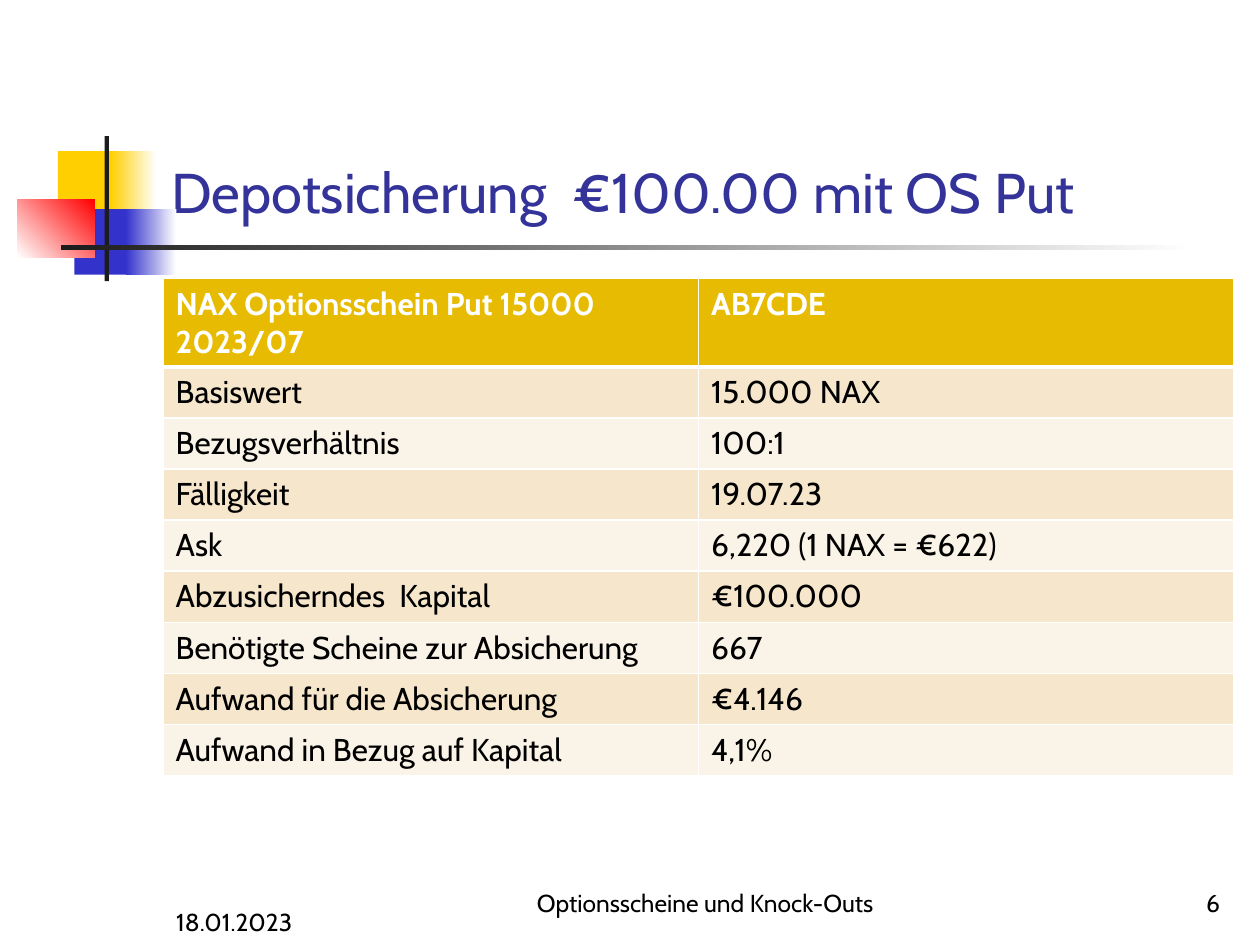
import pptx
import pptx.dml.color
import pptx.enum.shapes
import pptx.enum.text
import pptx.oxml
import pptx.oxml.ns
import pptx.util

Pt = pptx.util.Pt
RGBColor = pptx.dml.color.RGBColor
ALIGN = pptx.enum.text.PP_ALIGN
BOTTOM = pptx.enum.text.MSO_ANCHOR.BOTTOM

FONT = "Cabin"
WHITE = RGBColor(0xFF, 0xFF, 0xFF)
BLACK = RGBColor(0, 0, 0)
YELLOW = RGBColor(0xFF, 0xCF, 0x01)
BLUE = RGBColor(0x33, 0x33, 0xCC)
RED = RGBColor(0xFF, 0, 0)
CHARCOAL = RGBColor(0x1C, 0x1C, 0x1C)
TITLE_BLUE = RGBColor(0x33, 0x33, 0x99)
HEADER_GOLD = RGBColor(0xE7, 0xBB, 0x01)
BAND_COLORS = (RGBColor(0xF6, 0xE7, 0xCC), RGBColor(0xFA, 0xF3, 0xE7))

TITLE = "Depotsicherung  €100.00 mit OS Put"
TITLE_BOX = (90.7, 16.6, 613.4, 115.2)

# left, top, width, height, colors (two make a gradient), gradient angle
ORNAMENTS = [
    (33.1, 86.4, 34.6, 37.4, (YELLOW,), 0),
    (63.4, 86.4, 25.9, 37.4, (YELLOW, WHITE), 0),
    (42.5, 119.5, 33.1, 37.4, (BLUE,), 0),
    (72, 119.5, 28.8, 37.4, (BLUE, WHITE), 0),
    (10, 113.8, 44, 33.1, (WHITE, RED), 45),
    (59.8, 77.8, 2.4, 82.8, (CHARCOAL,), 0),
    (34.8, 140.2, 648, 2.4, (CHARCOAL, WHITE), 0),
]

# text, left, top, width, alignment
FOOTERS = [
    ("18.01.2023", 93.6, 502.6, 149.8, ALIGN.LEFT),
    ("Optionsscheine und Knock-Outs", 289, 491.8, 228.2, ALIGN.CENTER),
    ("6", 554.4, 491.8, 149.8, ALIGN.RIGHT),
]
FOOTER_HEIGHT = 36

TABLE_ROWS = [
    ("NAX Optionsschein Put 15000 2023/07", "AB7CDE"),
    ("Basiswert", "15.000 NAX"),
    ("Bezugsverhältnis", "100:1"),
    ("Fälligkeit", "19.07.23"),
    ("Ask", "6,220 (1 NAX = €622)"),
    ("Abzusicherndes  Kapital", "€100.000"),
    ("Benötigte Scheine zur Absicherung", "667"),
    ("Aufwand für die Absicherung", "€4.146"),
    ("Aufwand in Bezug auf Kapital", "4,1%"),
]
TABLE_LEFT, TABLE_TOP = 93.2, 159.2
COLUMN_WIDTH, HEADER_HEIGHT, ROW_HEIGHT = 306, 50, 29.2


def write(text_frame, text, size, color, bold=False, align=ALIGN.LEFT):
    paragraph = text_frame.paragraphs[0]
    paragraph.alignment = align
    run = paragraph.add_run()
    run.text = text
    run.font.name = FONT
    run.font.size = Pt(size)
    run.font.bold = bold
    run.font.color.rgb = color


def add_ornament(slide, left, top, width, height, colors, angle):
    shape = slide.shapes.add_shape(
        pptx.enum.shapes.MSO_SHAPE.RECTANGLE, Pt(left), Pt(top), Pt(width), Pt(height))
    shape.shadow.inherit = False
    shape.line.fill.background()
    if len(colors) == 1:
        shape.fill.solid()
        shape.fill.fore_color.rgb = colors[0]
    else:
        shape.fill.gradient()
        shape.fill.gradient_angle = angle
        for stop, color in zip(shape.fill.gradient_stops, colors):
            stop.color.rgb = color


def add_title(slide):
    title = slide.shapes.title
    title.left, title.top, title.width, title.height = map(Pt, TITLE_BOX)
    title.text_frame.vertical_anchor = BOTTOM
    title.text_frame.word_wrap = True
    write(title.text_frame, TITLE, 32, TITLE_BLUE)


def add_footer(slide, text, left, top, width, align):
    box = slide.shapes.add_textbox(Pt(left), Pt(top), Pt(width), Pt(FOOTER_HEIGHT))
    box.text_frame.word_wrap = True
    box.text_frame.vertical_anchor = BOTTOM
    write(box.text_frame, text, 14, BLACK, align=align)


def set_borders(cell, widths):
    """Draw white borders; widths maps each side (L, R, T, B) to points."""
    properties = cell._tc.get_or_add_tcPr()
    for side, width in widths.items():
        properties.append(pptx.oxml.parse_xml(
            f'<a:ln{side} {pptx.oxml.ns.nsdecls("a")} w="{Pt(width)}">'
            f'<a:solidFill><a:srgbClr val="{WHITE}"/></a:solidFill></a:ln{side}>'))


def add_table(slide):
    row_count, column_count = len(TABLE_ROWS), len(TABLE_ROWS[0])
    height = HEADER_HEIGHT + ROW_HEIGHT * (row_count - 1)
    table = slide.shapes.add_table(
        row_count, column_count, Pt(TABLE_LEFT), Pt(TABLE_TOP),
        Pt(COLUMN_WIDTH * column_count), Pt(height)).table
    for column in table.columns:
        column.width = Pt(COLUMN_WIDTH)
    for row_index, texts in enumerate(TABLE_ROWS):
        header = row_index == 0
        table.rows[row_index].height = Pt(HEADER_HEIGHT if header else ROW_HEIGHT)
        for column_index, text in enumerate(texts):
            cell = table.cell(row_index, column_index)
            set_borders(cell, {"L": 1, "R": 1, "T": 3 if row_index == 1 else 1,
                               "B": 3 if header else 1})
            cell.fill.solid()
            cell.fill.fore_color.rgb = (
                HEADER_GOLD if header else BAND_COLORS[(row_index - 1) % 2])
            write(cell.text_frame, text, 18, WHITE if header else BLACK, bold=header)


def main():
    presentation = pptx.Presentation()
    presentation.slide_width, presentation.slide_height = Pt(720), Pt(540)
    slide = presentation.slides.add_slide(presentation.slide_layouts[5])
    for ornament in ORNAMENTS:
        add_ornament(slide, *ornament)
    add_title(slide)
    for footer in FOOTERS:
        add_footer(slide, *footer)
    add_table(slide)
    presentation.save("out.pptx")


if __name__ == "__main__":
    main()
